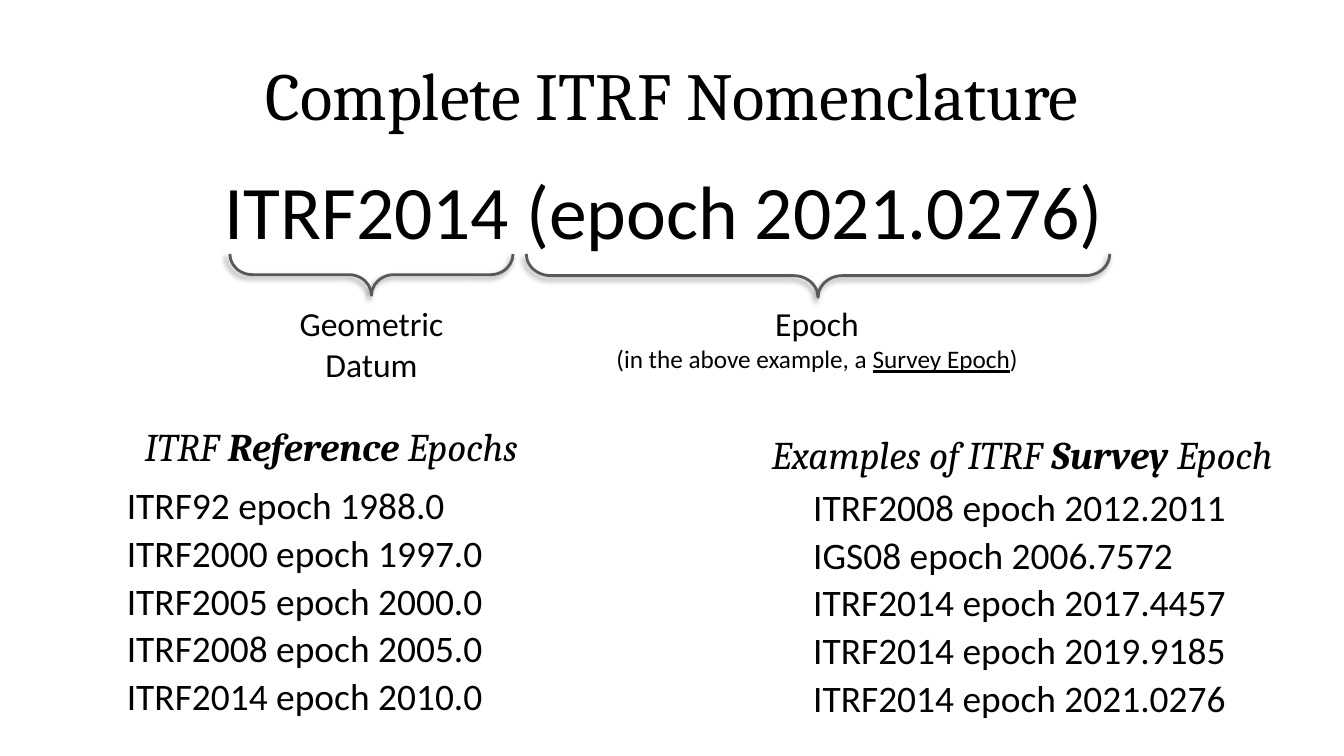
import pptx
import pptx.dml.color
import pptx.enum.shapes
import pptx.enum.text
import pptx.oxml
import pptx.oxml.ns
import pptx.util
from dataclasses import dataclass

Pt = pptx.util.Pt
RGB = pptx.dml.color.RGBColor
ALIGN = pptx.enum.text.PP_ALIGN
ANCHOR = pptx.enum.text.MSO_ANCHOR


@dataclass(frozen=True)
class Theme:
    ink: RGB = RGB(0x00, 0x00, 0x00)
    brace: RGB = RGB(0x59, 0x59, 0x59)
    heading_font: str = "Cambria"
    body_font: str = "Calibri"
    title: float = 48
    name: float = 54
    label: float = 24
    note: float = 18
    heading: float = 28
    entry: float = 26.7


theme = Theme()

deck = pptx.Presentation()
deck.slide_width, deck.slide_height = Pt(960), Pt(540)
page = deck.slides.add_slide(deck.slide_layouts[6])


def add_text(place, lines, font, align=ALIGN.CENTER, after=0, anchor=ANCHOR.TOP):
    """Each line is (size, spans); each span is (text, font attributes to switch on)."""
    box = page.shapes.add_textbox(*[Pt(length) for length in place])
    frame = box.text_frame
    frame.word_wrap = True
    frame.vertical_anchor = anchor
    for index, (size, spans) in enumerate(lines):
        para = frame.add_paragraph() if index else frame.paragraphs[0]
        para.alignment = align
        para.space_after = Pt(after)
        para.font.name, para.font.size = font, Pt(size)
        para.font.color.rgb = theme.ink
        for text, switches in spans:
            span = para.add_run()
            span.text = text
            for switch in switches:
                setattr(span.font, switch, True)


# Title and the full datum name
add_text((48, 21.6, 864, 90), [(theme.title, [("Complete ITRF Nomenclature", ())])],
         theme.heading_font, anchor=ANCHOR.MIDDLE)
add_text((153.4, 113.8, 653, 72.7), [(theme.name, [("ITRF2014 (epoch 2021.0276)", ())])],
         theme.body_font, align=ALIGN.LEFT)

# Braces under the two parts: centre x, centre y, span, depth, curvature
SHADOW = (
    f'<a:outerShdw {pptx.oxml.ns.nsdecls("a")} blurRad="{Pt(4)}" dist="{Pt(3)}" '
    f'dir="{135 * 60000}" rotWithShape="0"><a:srgbClr val="{theme.ink}">'
    '<a:alpha val="40000"/></a:srgbClr></a:outerShdw>'
)
for centre_x, centre_y, span_width, depth, curve in (
    (265.3, 196.2, 202.3, 29.5, 0.546),
    (584.3, 196.9, 416.9, 31, 0.565),
):
    brace = page.shapes.add_shape(
        pptx.enum.shapes.MSO_SHAPE.RIGHT_BRACE,
        Pt(centre_x - depth / 2), Pt(centre_y - span_width / 2), Pt(depth), Pt(span_width))
    brace.rotation = 90
    brace.adjustments[0], brace.adjustments[1] = curve, 0.5
    brace.fill.background()
    brace.line.color.rgb = theme.brace
    brace.line.width = Pt(2)
    brace.shadow.inherit = False
    effects = brace._element.spPr.find(pptx.oxml.ns.qn("a:effectLst"))
    effects.append(pptx.oxml.parse_xml(SHADOW))

# Labels below the braces
add_text((164.2, 213.1, 202.3, 65.5),
         [(theme.label, [(word, ())]) for word in ("Geometric", "Datum")], theme.body_font)
add_text((375.1, 213.1, 416.9, 58.3),
         [(theme.label, [("Epoch", ())]),
          (theme.note, [("(in the above example, a ", ()),
                        ("Survey Epoch", ("underline",)), (")", ())])],
         theme.body_font)

# Two lists of epochs, each with a heading
for heading_place, words, list_place, entries in (
    ((83.5, 298.1, 306, 41), ("ITRF ", "Reference", " Epochs"), (83.5, 340.6, 306, 177.1),
     ("ITRF92 epoch 1988.0", "ITRF2000 epoch 1997.0", "ITRF2005 epoch 2000.0",
      "ITRF2008 epoch 2005.0", "ITRF2014 epoch 2010.0")),
    ((531.4, 303.8, 397.4, 41), ("Examples of ITRF ", "Survey", " Epoch"),
     (573.8, 342, 355, 177.1),
     ("ITRF2008 epoch 2012.2011", "IGS08 epoch 2006.7572", "ITRF2014 epoch 2017.4457",
      "ITRF2014 epoch 2019.9185", "ITRF2014 epoch 2021.0276")),
):
    before, strong, behind = words
    add_text(heading_place,
             [(theme.heading, [(before, ("italic",)), (strong, ("italic", "bold")),
                               (behind, ("italic",))])],
             theme.heading_font)
    add_text(list_place, [(theme.entry, [(entry, ())]) for entry in entries],
             theme.body_font, align=ALIGN.LEFT, after=2.2)

deck.save("out.pptx")
